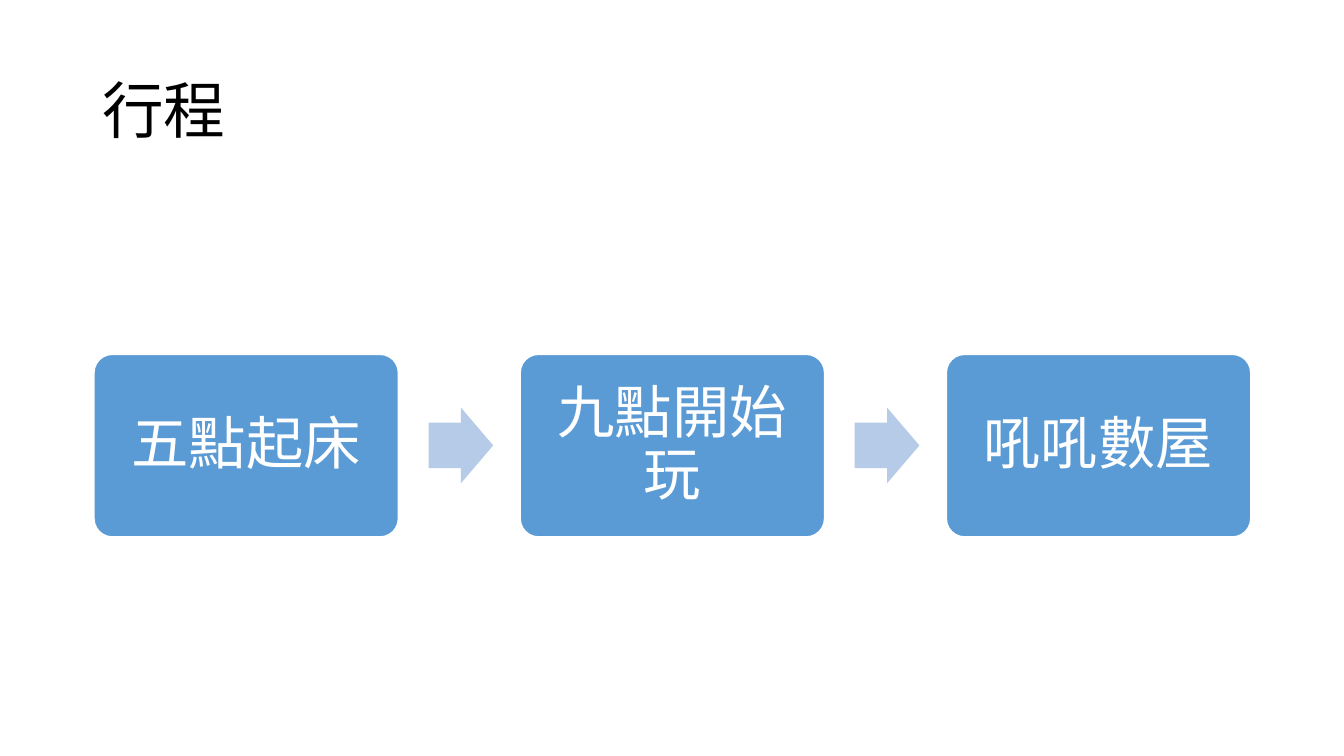
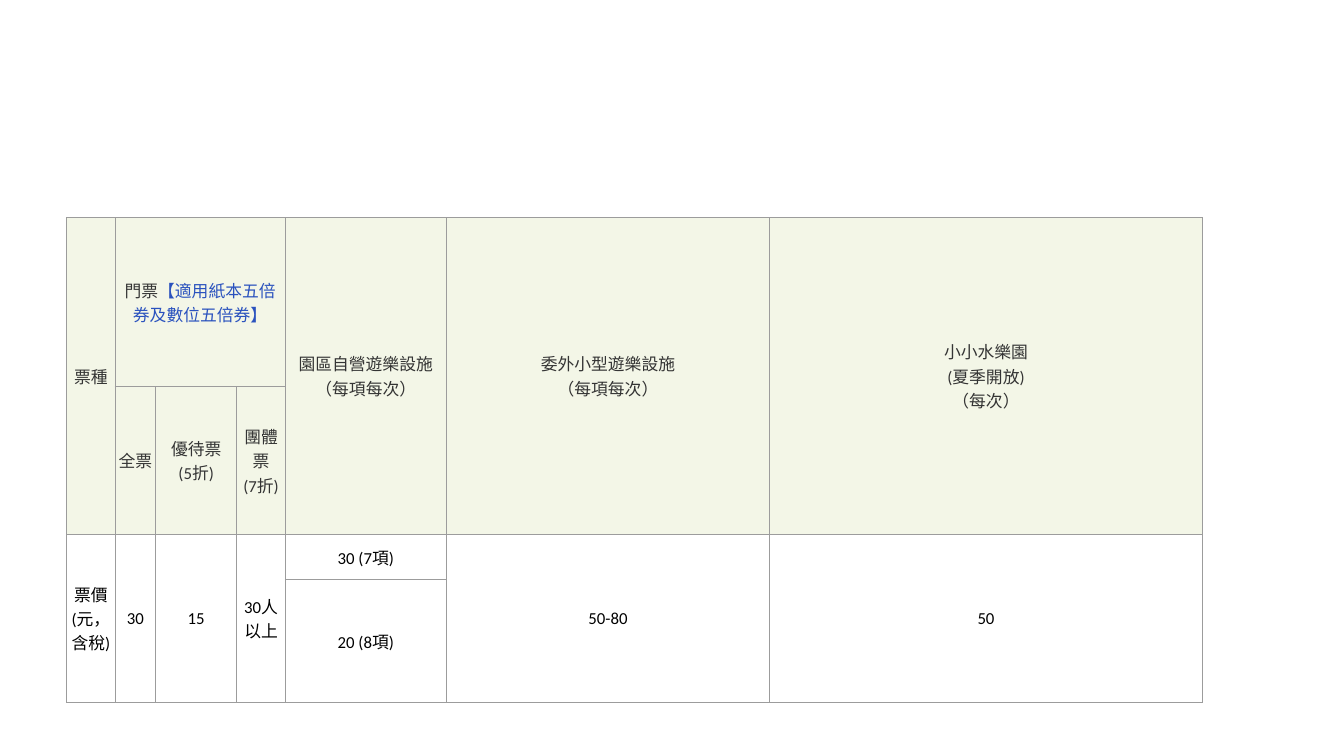
"""Build a two-slide deck with a day itinerary and a ticket price table."""
import copy

import lxml.etree
import pptx
import pptx.dml.color
import pptx.enum.shapes
import pptx.enum.text
import pptx.oxml
import pptx.util

Cm = pptx.util.Cm
Pt = pptx.util.Pt
SHAPE = pptx.enum.shapes.MSO_SHAPE
MIDDLE = pptx.enum.text.MSO_ANCHOR.MIDDLE
CENTER = pptx.enum.text.PP_ALIGN.CENTER
NS = "http://schemas.openxmlformats.org/drawingml/2006/main"

FONT = "Calibri"
BLACK, WHITE, GREY = "000000", "FFFFFF", "343434"
BLUE, PALE_BLUE, LINK_BLUE = "5B9BD5", "B5CBE7", "2A52BE"
HEADER_FILL, BORDER = "F3F6E7", "9C9C9C"


def rgb(value):
    return pptx.dml.color.RGBColor.from_string(value)


def add_text(p, text, size, color):
    for i, line in enumerate(text.split("\n")):
        if i:
            p.add_line_break()
            p._p[-1].append(copy.deepcopy(r._r.rPr))
        r = p.add_run()
        r.text = line
        r.font.name = FONT
        r.font.size = Pt(size)
        r.font.color.rgb = rgb(color)


prs = pptx.Presentation()
prs.slide_width, prs.slide_height = Cm(33.87), Cm(19.05)
blank = prs.slide_layouts[6]

s = prs.slides.add_slide(blank)
sp = s.shapes.add_textbox(Cm(2.33), Cm(1.01), Cm(29.21), Cm(3.68))
tf = sp.text_frame
tf.word_wrap = True
tf.vertical_anchor = MIDDLE
p = tf.paragraphs[0]
p.line_spacing = 0.9
add_text(p, "行程", 44, BLACK)

steps = ["五點起床", "九點開始玩", "吼吼數屋"]
step_left, step_pitch = 2.37, 10.74
for i, step in enumerate(steps):
    left = step_left + i * step_pitch
    sp = s.shapes.add_shape(SHAPE.ROUNDED_RECTANGLE, Cm(left), Cm(8.93), Cm(7.67), Cm(4.6))
    sp.adjustments[0] = 0.1
    sp.shadow.inherit = False
    sp.fill.solid()
    sp.fill.fore_color.rgb = rgb(BLUE)
    sp.line.color.rgb = rgb(WHITE)
    sp.line.width = Pt(1)
    tf = sp.text_frame
    tf.word_wrap = True
    tf.vertical_anchor = MIDDLE
    tf.margin_left = tf.margin_right = tf.margin_top = tf.margin_bottom = Cm(0.43)
    p = tf.paragraphs[0]
    p.alignment = CENTER
    p.line_spacing = 0.9
    add_text(p, step, 41, WHITE)

    if i < len(steps) - 1:
        sp = s.shapes.add_shape(SHAPE.RIGHT_ARROW, Cm(left + 8.43), Cm(10.27), Cm(1.63), Cm(1.91))
        sp.adjustments[0], sp.adjustments[1] = 0.6, 0.5
        sp.shadow.inherit = False
        sp.fill.solid()
        sp.fill.fore_color.rgb = rgb(PALE_BLUE)
        sp.line.fill.background()

s = prs.slides.add_slide(blank)
col_widths = [1.22, 1.02, 2.05, 1.22, 4.06, 8.15, 10.9]
row_heights = [4.26, 3.72, 1.14, 3.1]
header_rows = 2
table = s.shapes.add_table(
    len(row_heights), len(col_widths), Cm(1.68), Cm(5.48), Cm(sum(col_widths)), Cm(sum(row_heights))
).table
for col, width in zip(table.columns, col_widths):
    col.width = Cm(width)
for row, height in zip(table.rows, row_heights):
    row.height = Cm(height)

for r_idx in range(len(row_heights)):
    for c_idx in range(len(col_widths)):
        cell = table.cell(r_idx, c_idx)
        cell.margin_left = cell.margin_right = cell.margin_top = cell.margin_bottom = Cm(0.04)
        cell.vertical_anchor = MIDDLE
        if r_idx < header_rows:
            cell.fill.solid()
            cell.fill.fore_color.rgb = rgb(HEADER_FILL)
        else:
            cell.fill.background()
        tc_pr = cell._tc.get_or_add_tcPr()
        for i, side in enumerate(["lnL", "lnR", "lnT", "lnB"]):
            ln = pptx.oxml.parse_xml(f'<a:{side} xmlns:a="{NS}" w="{Pt(0.75)}"/>')
            fill = lxml.etree.SubElement(ln, f"{{{NS}}}solidFill")
            lxml.etree.SubElement(fill, f"{{{NS}}}srgbClr", val=BORDER)
            tc_pr.insert(i, ln)

cells = [
    (0, 0, 2, 1, "票種"),
    (0, 1, 1, 3, "門票"),
    (0, 4, 2, 1, "園區自營遊樂設施\n（每項每次）"),
    (0, 5, 2, 1, "委外小型遊樂設施\n（每項每次）"),
    (0, 6, 2, 1, "小小水樂園\n(夏季開放)\n（每次）"),
    (1, 1, 1, 1, "全票"),
    (1, 2, 1, 1, "優待票\n(5折)"),
    (1, 3, 1, 1, "團體票\n(7折)"),
    (2, 0, 2, 1, "票價\n(元，含稅)"),
    (2, 1, 2, 1, "30"),
    (2, 2, 2, 1, "15"),
    (2, 3, 2, 1, "30人\n以上"),
    (2, 4, 1, 1, "30 (7項)"),
    (2, 5, 2, 1, "50-80"),
    (2, 6, 2, 1, "50"),
    (3, 4, 1, 1, "20 (8項)"),
]
for r_idx, c_idx, row_span, col_span, text in cells:
    cell = table.cell(r_idx, c_idx)
    if row_span > 1 or col_span > 1:
        cell.merge(table.cell(r_idx + row_span - 1, c_idx + col_span - 1))
    p = cell.text_frame.paragraphs[0]
    p.alignment = CENTER
    add_text(p, text, 12, GREY if r_idx < header_rows else BLACK)
add_text(table.cell(0, 1).text_frame.paragraphs[0], "【適用紙本五倍券及數位五倍券】", 12, LINK_BLUE)

prs.save("out.pptx")
